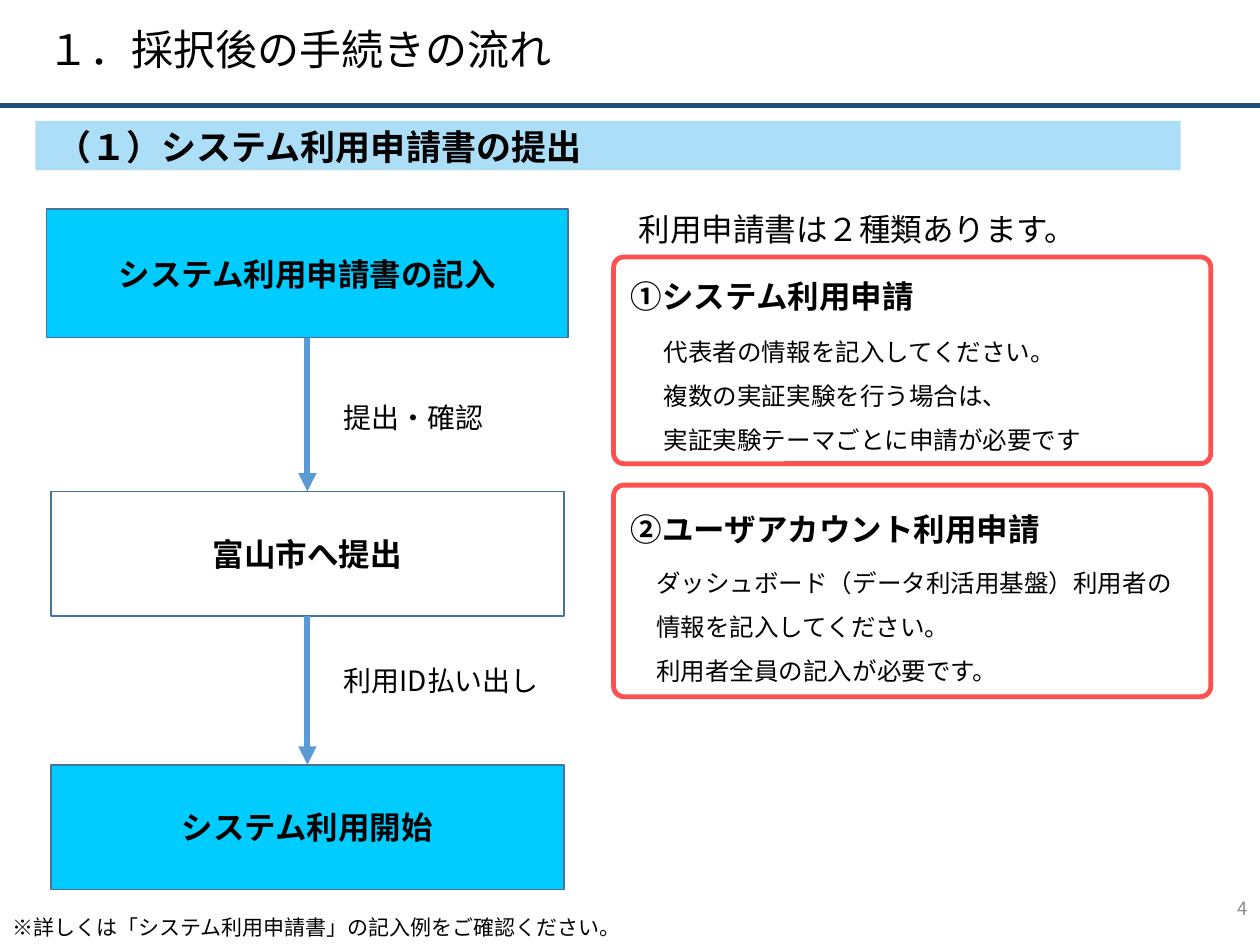
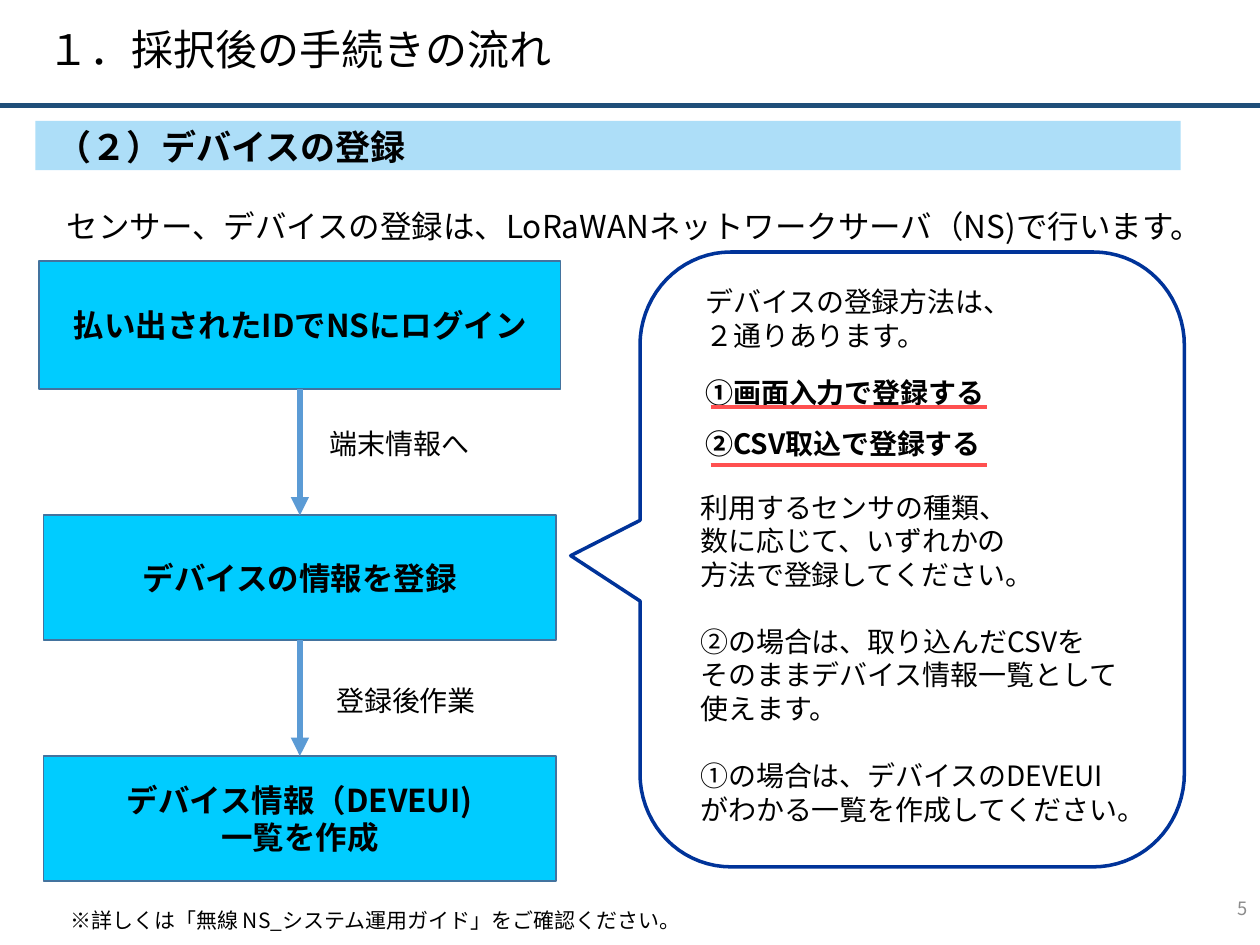
from math import cos, pi, sin

from lxml import etree
from pptx import Presentation
from pptx.dml.color import RGBColor
from pptx.enum.shapes import MSO_CONNECTOR, MSO_SHAPE
from pptx.enum.text import MSO_ANCHOR, PP_ALIGN
from pptx.oxml.ns import qn
from pptx.util import Inches, Pt

STRAIGHT = MSO_CONNECTOR.STRAIGHT
RECT, ROUND_RECT = MSO_SHAPE.RECTANGLE, MSO_SHAPE.ROUNDED_RECTANGLE
TOP, MIDDLE = MSO_ANCHOR.TOP, MSO_ANCHOR.MIDDLE
LEFT, CENTER, RIGHT = PP_ALIGN.LEFT, PP_ALIGN.CENTER, PP_ALIGN.RIGHT

FONT = "Noto Sans CJK JP"
BLACK = RGBColor(0x00, 0x00, 0x00)
GRAY = RGBColor(0x8C, 0x8C, 0x8C)
NAVY = RGBColor(0x1F, 0x4E, 0x79)
PALE_BLUE = RGBColor(0xAD, 0xDE, 0xF8)
CYAN = RGBColor(0x00, 0xCC, 0xFF)
BOX_EDGE = RGBColor(0x43, 0x73, 0x9E)
ARROW_BLUE = RGBColor(0x5B, 0x9B, 0xD5)
RED = RGBColor(0xFF, 0x50, 0x50)
CALLOUT_BLUE = RGBColor(0x00, 0x33, 0x99)

TITLE = "１．採択後の手続きの流れ"
FIRST_PAGE = 4
BLANK_LINE = 19.2  # points, one line of 16 pt text

# Text formats
LEAD = {"size": 18}
HEADING = {"size": 18, "bold": True, "spacing": 1.5}
DETAIL = {"size": 14, "spacing": 1.5}
NOTE = {"size": 12, "spacing": 1.5}
BODY = {"size": 16}
CHOICE = {"size": 16, "bold": True}

# Flow steps: top, width, height, fill, lines
# Flow labels and texts: left, top, width, height, lines, format
SLIDES = [
    {
        "section": "（１）システム利用申請書の提出",
        "flow_center": 2.44,
        "steps": [
            (1.66, 4.14, 1.02, CYAN, ["システム利用申請書の記入"]),
            (3.9, 4.07, 0.99, None, ["富山市へ提出"]),
            (6.07, 4.07, 0.99, CYAN, ["システム利用開始"]),
        ],
        "texts": [
            (2.63, 3.13, 1.85, 0.37, ["提出・確認"], BODY),
            (2.63, 5.22, 1.85, 0.37, ["利用ID払い出し"], BODY),
            (4.97, 1.62, 4.26, 0.4, ["利用申請書は２種類あります。"], LEAD),
            (4.91, 2, 4.26, 0.52, ["①システム利用申請"], HEADING),
            (5.17, 2.51, 4.26, 1.16, [
                "代表者の情報を記入してください。",
                "複数の実証実験を行う場合は、",
                "実証実験テーマごとに申請が必要です"], DETAIL),
            (4.91, 3.85, 4.26, 0.52, ["②ユーザアカウント利用申請"], HEADING),
            (5.11, 4.34, 4.36, 1.16, [
                "ダッシュボード（データ利活用基盤）利用者の情報を記入してください。",
                "利用者全員の記入が必要です。"], DETAIL),
            (0, 7.11, 8.77, 0.4,
             ["※詳しくは「システム利用申請書」の記入例をご確認ください。"], NOTE),
        ],
        "red_frames": [(4.87, 2.04, 4.74, 1.64), (4.87, 3.85, 4.74, 1.68)],
    },
    {
        "section": "（２）デバイスの登録",
        "flow_center": 2.38,
        "steps": [
            (2.07, 4.14, 1.02, CYAN, ["払い出されたIDでNSにログイン"]),
            (4.09, 4.07, 0.99, CYAN, ["デバイスの情報を登録"]),
            (6, 4.07, 0.99, CYAN, ["デバイス情報（DEVEUI)", "一覧を作成"]),
        ],
        "callout": {"box": (5.08, 2, 9.4, 6.88), "radius": (0.72, 0.74),
                    "tail": [(5.08, 4.77), (4.53, 4.41), (5.08, 4.13)]},
        "texts": [
            (2.52, 3.34, 1.85, 0.37, ["端末情報へ"], BODY),
            (2.57, 5.38, 1.85, 0.37, ["登録後作業"], BODY),
            (0.43, 1.59, 9.31, 0.4,
             ["センサー、デバイスの登録は、LoRaWANネットワークサーバ（NS)で行います。"], LEAD),
            (5.5, 2.21, 3.29, 0.64,
             ["デバイスの登録方法は、", "２通りあります。"], BODY),
            (5.5, 2.93, 3.29, 0.37, ["①画面入力で登録する"], CHOICE),
            (5.5, 3.34, 3.29, 0.37, ["②CSV取込で登録する"], CHOICE),
            (5.46, 3.84, 3.55, 2.79, [
                "利用するセンサの種類、",
                "数に応じて、いずれかの",
                "方法で登録してください。",
                ("②の場合は、取り込んだCSVを", BLANK_LINE),
                "そのままデバイス情報一覧として使えます。",
                ("①の場合は、デバイスのDEVEUIがわかる一覧を作成してください。",
                 BLANK_LINE)], BODY),
            (0.46, 7.05, 8.77, 0.4,
             ["※詳しくは「無線 NS_システム運用ガイド」をご確認ください。"], NOTE),
        ],
        "underlines": [(5.64, 3.23, 7.83), (5.64, 3.69, 7.83)],
    },
]


def write(sp, lines, size, bold=False, color=BLACK, align=LEFT, anchor=TOP,
          spacing=None):
    """Fill a shape with paragraphs; a (text, points) line has space before it."""
    tf = sp.text_frame
    tf.word_wrap = True
    tf.vertical_anchor = anchor
    for i, line in enumerate(lines):
        text, gap = line if isinstance(line, tuple) else (line, 0)
        p = tf.paragraphs[0] if i == 0 else tf.add_paragraph()
        p.alignment = align
        if spacing:
            p.line_spacing = spacing
        if gap:
            p.space_before = Pt(gap)
        r = p.add_run()
        r.text = text
        for name, value in {"name": FONT, "size": Pt(size), "bold": bold}.items():
            setattr(r.font, name, value)
        r.font.color.rgb = color
        etree.SubElement(r.font._element, qn("a:ea"), typeface=FONT)


def add_text(s, left, top, width, height, lines, fmt):
    box = s.shapes.add_textbox(*map(Inches, (left, top, width, height)))
    write(box, lines, **fmt)


def paint(sp, fill=None, edge=None, weight=1):
    sp.shadow.inherit = False
    if fill is None:
        sp.fill.background()
    else:
        sp.fill.solid()
        sp.fill.fore_color.rgb = fill
    if edge is None:
        sp.line.fill.background()
    else:
        sp.line.color.rgb = edge
        sp.line.width = Pt(weight)


def add_shape(s, kind, box, **style):
    sp = s.shapes.add_shape(kind, *map(Inches, box))
    paint(sp, **style)
    return sp


def add_line(s, start, end, color, weight):
    line = s.shapes.add_connector(STRAIGHT, *map(Inches, start + end))
    line.line.color.rgb = color
    line.line.width = Pt(weight)
    etree.SubElement(line._element.spPr, qn("a:effectLst"))
    return line


def add_flow(s, center, steps):
    boxes = []
    for top, width, height, fill, lines in steps:
        sp = add_shape(s, RECT, (center - width / 2, top, width, height),
                       fill=fill, edge=BOX_EDGE)
        write(sp, lines, 18, bold=True, align=CENTER, anchor=MIDDLE)
        boxes.append(sp)
    for upper, lower in zip(boxes, boxes[1:]):
        arrow = add_line(s, (0, 0), (1, 1), ARROW_BLUE, 3.5)
        arrow.begin_connect(upper, 2)
        arrow.end_connect(lower, 0)
        etree.SubElement(arrow.line._get_or_add_ln(), qn("a:tailEnd"),
                         type="triangle")


def add_callout(s, box, radius, tail):
    """Rounded outline, clockwise from the top right corner, with a tail on the left."""
    left, top, right, bottom = box
    rx, ry = radius
    corners = [(right - rx, top + ry, -90), (right - rx, bottom - ry, 0),
               (left + rx, bottom - ry, 90), (left + rx, top + ry, 180)]
    points = []
    for cx, cy, first in corners:
        if first == 180:
            points += tail
        for degrees in range(first, first + 91, 5):
            a = degrees * pi / 180
            points.append((cx + rx * cos(a), cy + ry * sin(a)))
    points = [(Inches(x), Inches(y)) for x, y in points]
    builder = s.shapes.build_freeform(*points[0])
    builder.add_line_segments(points[1:], close=True)
    paint(builder.convert_to_shape(), edge=CALLOUT_BLUE, weight=2)


def add_frame(s, page, section):
    """Title, rule, section band and page number."""
    add_line(s, (0, 0.84), (10, 0.84), NAVY, 3)
    add_text(s, 9.6, 7.01, 0.4, 0.4, [str(page)],
             {"size": 10.5, "color": GRAY, "align": RIGHT, "anchor": MIDDLE})
    add_text(s, 0.28, 0.03, 9.29, 0.76, [TITLE],
             {"size": 24, "anchor": MIDDLE, "spacing": 0.9})
    add_shape(s, RECT, (0.28, 0.96, 9.09, 0.39), fill=PALE_BLUE)
    add_text(s, 0.35, 0.95, 7.18, 0.44, [section], {"size": 20, "bold": True})


def main():
    prs = Presentation()
    prs.slide_width, prs.slide_height = Inches(10), Inches(7.5)
    for page, content in enumerate(SLIDES, FIRST_PAGE):
        s = prs.slides.add_slide(prs.slide_layouts[6])
        add_frame(s, page, content["section"])
        add_flow(s, content["flow_center"], content["steps"])
        if "callout" in content:
            add_callout(s, **content["callout"])
        for text in content["texts"]:
            add_text(s, *text)
        for box in content.get("red_frames", []):
            frame = add_shape(s, ROUND_RECT, box, edge=RED, weight=2.75)
            frame.adjustments[0] = 0.05
        for left, y, right in content.get("underlines", []):
            add_line(s, (left, y), (right, y), RED, 2.25)
    prs.save("out.pptx")


if __name__ == "__main__":
    main()
